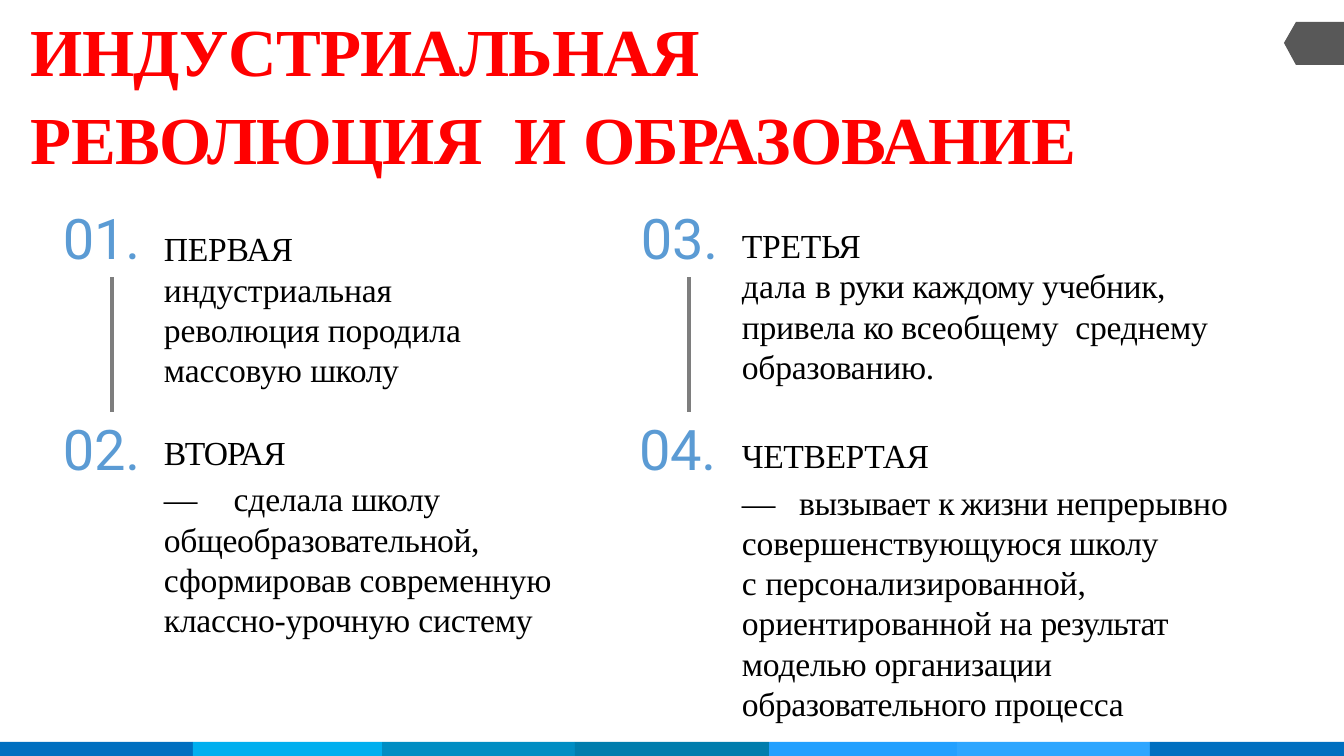
"""Builds the slide on industrial revolutions and education."""
from itertools import pairwise

from lxml.etree import SubElement
from pptx import Presentation
from pptx.dml.color import RGBColor
from pptx.enum.shapes import MSO_CONNECTOR as Connector, MSO_SHAPE as Preset
from pptx.enum.text import MSO_ANCHOR as Anchor, MSO_AUTO_SIZE as AutoSize, PP_ALIGN as Align
from pptx.oxml.ns import qn
from pptx.util import Emu, Pt

PX = 914400 / 100.8
RED = RGBColor(0xFF, 0x00, 0x00)
BLACK = RGBColor(0x00, 0x00, 0x00)
NUMBER_BLUE = RGBColor(0x5B, 0x9B, 0xD4)
RULE_GRAY = RGBColor(0x7E, 0x7E, 0x7E)
TAG_GRAY = RGBColor(0x58, 0x58, 0x58)
DEEP_BLUE = RGBColor(0x00, 0x6F, 0xC0)
CYAN = RGBColor(0x00, 0xAF, 0xEF)
TEAL = RGBColor(0x00, 0x8D, 0xC3)
DARK_TEAL = RGBColor(0x00, 0x7D, 0xAD)
SKY = RGBColor(0x22, 0xA0, 0xFF)
LIGHT_SKY = RGBColor(0x2E, 0xA6, 0xFF)

HEADING = ({"name": "Times New Roman", "size": Pt(48), "bold": True}, RED)
BODY = ({"name": "Times New Roman", "size": Pt(24)}, BLACK)
NUMBER = ({"name": "Roboto", "size": Pt(40)}, NUMBER_BLUE)

RIBBON_EDGES = (0, 193, 382, 575, 769, 957, 1150, 1344)
RIBBON_COLORS = (DEEP_BLUE, CYAN, TEAL, DARK_TEAL, SKY, LIGHT_SKY, DEEP_BLUE)
TAG_OUTLINE = ((1344, 22), (1296, 22), (1284, 43), (1296, 65), (1344, 65))
RULE_COLUMNS = (112, 689)

TITLE = [(1, [("ИНДУСТРИАЛЬНАЯ РЕВОЛЮЦИЯ", -0.6), (" ", 11), ("И ", -0.2), ("ОБРАЗОВАНИЕ", -0.7)])]
FIRST = [
    (1, [("ПЕРВАЯ", -0.2)]),
    (0.1, [("индустриальная революция породила массовую ", -0.1), ("школу", -0.3)]),
]
SECOND = [
    (5.2, [("ВТОРАЯ", -0.8)]),
    (4.2, [("— ", 9.9), ("сделала ", -0.1), ("школу ", -0.3), ("общеобразовательной,", -0.25)]),
    (0, [("сформировав современную ", -0.1), ("классно-урочную ", -0.2), ("систему", -0.1)]),
]
THIRD_AND_FOURTH = [
    (1, [("ТРЕТЬЯ", -0.2)]),
    (0, [("дала ", 0.1), ("в ", 0), ("руки ", -0.5), ("каждому ", -0.4), ("учебник, ", -0.3),
         ("привела ", -0.2), ("ко ", -0.7), ("всеобщему", -0.1), (" ", 6),
         ("среднему образованию.", -0.2)]),
    (35, [("ЧЕТВЕРТАЯ", -0.3)]),
    (4.2, [("— ", 5.4), ("вызывает ", -0.3), ("к ", -1.5), ("жизни", -0.5),
           (" непрерывно совершенствующуюся ", -0.1), ("школу", -0.3)]),
    (0, [("с ", 0), ("персонализированной, ориентированной на ", -0.1), ("результат ", -0.6),
         ("моделью организации ", -0.2), ("образовательного ", -0.3), ("процесса", -0.1)]),
]


def px(length):
    """Turn pixels into EMU."""
    return Emu(round(length * PX))


class SlideBuilder:
    """Holds the text frame style and the current slide."""

    frame_format = {
        "word_wrap": True, "auto_size": AutoSize.SHAPE_TO_FIT_TEXT, "vertical_anchor": Anchor.TOP,
        "margin_left": px(1), "margin_right": 0, "margin_bottom": 0,
    }

    def __init__(self, slide):
        """Keep the slide to draw on."""
        self.slide = slide

    def fill_frame(self, frame, paragraphs, style, top=1, line_spacing=1.0, tab=None):
        """Fill a text frame with spaced paragraphs of tracked runs."""
        for key, value in {**self.frame_format, "margin_top": px(top)}.items():
            setattr(frame, key, value)
        font_format, color = style
        for index, (before, runs) in enumerate(paragraphs):
            paragraph = frame.add_paragraph() if index else frame.paragraphs[0]
            spacing = {"alignment": Align.LEFT, "space_before": Pt(before),
                       "space_after": Pt(0), "line_spacing": line_spacing}
            for key, value in spacing.items():
                setattr(paragraph, key, value)
            if tab:
                stops = SubElement(paragraph._p.get_or_add_pPr(), qn("a:tabLst"))
                SubElement(stops, qn("a:tab"), pos=str(px(tab)), algn="l")
            for words, tracking in runs:
                run = paragraph.add_run()
                run.text = words
                for key, value in font_format.items():
                    setattr(run.font, key, value)
                run.font.color.rgb = color
                run._r.get_or_add_rPr().set("spc", str(round(tracking * 100)))

    def title(self, box, paragraphs):
        """Place and fill the title placeholder."""
        heading = self.slide.shapes.title
        for key, value in zip(("left", "top", "width", "height"), box):
            setattr(heading, key, px(value))
        self.fill_frame(heading.text_frame, paragraphs, HEADING, line_spacing=1.09)

    def text(self, box, paragraphs, style=BODY, **options):
        """Add a text box."""
        frame = self.slide.shapes.add_textbox(*map(px, box)).text_frame
        self.fill_frame(frame, paragraphs, style, **options)

    def paint(self, shape, color):
        """Give a shape a flat fill with no line or shadow."""
        shape.shadow.inherit = False
        shape.fill.solid()
        shape.fill.fore_color.rgb = color
        shape.line.fill.background()

    def band(self, left, right, color):
        """Add one segment of the bottom ribbon."""
        box = (left, 742, right - left, 14)
        self.paint(self.slide.shapes.add_shape(Preset.RECTANGLE, *map(px, box)), color)

    def outline(self, points, color):
        """Add a filled polygon."""
        start, *others = points
        builder = self.slide.shapes.build_freeform(*start, scale=PX)
        builder.add_line_segments(others, close=True)
        self.paint(builder.convert_to_shape(), color)

    def rule(self, x, top, bottom):
        """Add a vertical line between two numbers."""
        rule = self.slide.shapes.add_connector(Connector.STRAIGHT, *map(px, (x, bottom, x, top)))
        rule.line.color.rgb = RULE_GRAY
        rule.line.width = Pt(2.28)
        SubElement(rule._element.spPr, qn("a:effectLst"))


def main():
    """Build and save the slide."""
    deck = Presentation()
    deck.slide_width, deck.slide_height = px(1344), px(756)
    page = SlideBuilder(deck.slides.add_slide(deck.slide_layouts[5]))
    for (left, right), color in zip(pairwise(RIBBON_EDGES), RIBBON_COLORS):
        page.band(left, right, color)
    page.outline(TAG_OUTLINE, TAG_GRAY)
    page.title((30, 1, 1106, 179), TITLE)
    page.text((163, 227, 336, 164), FIRST)
    page.text((62, 203, 657, 70), [(0.9, [("01.\t03.", -0.1)])], NUMBER, tab=578)
    for left, number in ((62, "02."), (638, "04.")):
        page.text((left, 414, 81, 70), [(0.9, [(number, -0.1)])], NUMBER)
    page.text((163, 425, 438, 217), SECOND, top=7)
    page.text((741, 224, 523, 504), THIRD_AND_FOURTH)
    for x in RULE_COLUMNS:
        page.rule(x, 277, 412)
    deck.save("out.pptx")


if __name__ == "__main__":
    main()
